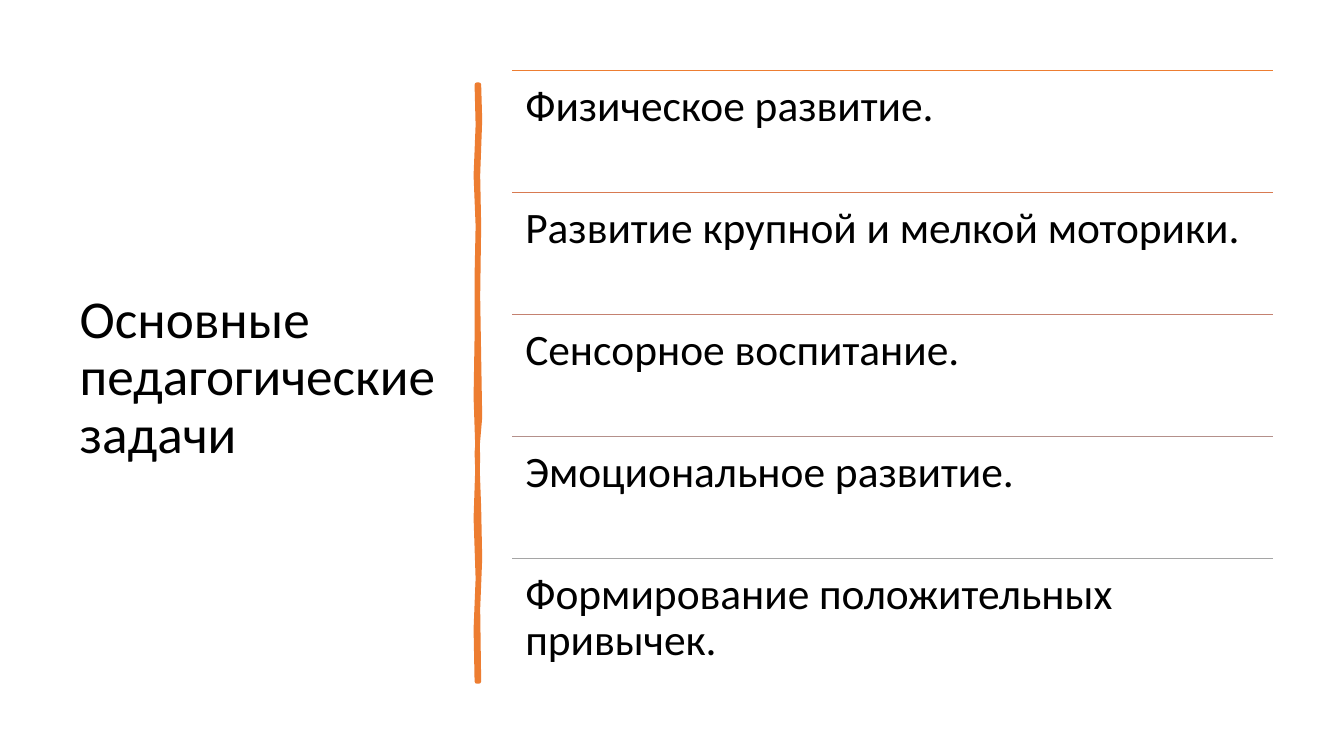
from pptx import Presentation
from pptx.dml.color import RGBColor
from pptx.enum.shapes import MSO_CONNECTOR
from pptx.enum.text import MSO_ANCHOR, MSO_AUTO_SIZE, PP_ALIGN
from pptx.oxml.ns import qn
from pptx.util import Inches, Pt

FONT = "Calibri"
ACCENT = "ED7D31"
TASKS = [
    ("Физическое развитие.", "ED7D31"),
    ("Развитие крупной и мелкой моторики.", "D87A51"),
    ("Сенсорное воспитание.", "C48170"),
    ("Эмоциональное развитие.", "B4908B"),
    ("Формирование положительных привычек.", "A5A5A5"),
]
RIGHT_EDGE = [(0, 0.02), (0.35, 0.03), (0.9, 0.01), (1.4, 0.02), (2.1, 0.01),
              (2.7, 0.02), (3.3, 0.03), (3.65, 0), (4.2, 0.02), (4.7, 0.03),
              (5.2, 0.01), (5.92, 0.02)]
LEFT_EDGE = [(5.92, 0), (5.4, -0.01), (4.9, 0.01), (4.3, -0.01), (3.7, 0.01),
             (3.1, -0.01), (2.5, 0), (1.9, 0), (1.4, 0.01), (0.9, -0.01),
             (0.4, 0.01), (0, 0)]


def color(value):
    """Return the colour for a hex string."""
    return RGBColor.from_string(value)


def write_text(box, text, size, anchor=MSO_ANCHOR.TOP, inset=0.1, inset_y=0.05):
    """Fill a shape with one left-aligned, wrapped paragraph."""
    frame = box.text_frame
    frame.word_wrap = True
    frame.auto_size = MSO_AUTO_SIZE.NONE
    frame.vertical_anchor = anchor
    frame.margin_left = frame.margin_right = Inches(inset)
    frame.margin_top = frame.margin_bottom = Inches(inset_y)
    para = frame.paragraphs[0]
    para.alignment = PP_ALIGN.LEFT
    para.line_spacing = 0.9
    para.space_before = Pt(0)
    span = para.add_run()
    span.text = text
    span.font.name = FONT
    span.font.size = Pt(size)
    span.font.color.rgb = color("000000")


def add_title(page, left, top, width, height):
    """Place the heading in the title placeholder."""
    title = page.shapes.title
    title.left, title.top = Inches(left), Inches(top)
    title.width, title.height = Inches(width), Inches(height)
    write_text(title, "Основные педагогические задачи", 38, anchor=MSO_ANCHOR.MIDDLE)


def add_brush_stroke(page, left, top):
    """Draw the uneven vertical divider."""
    points = [(Inches(left + shift), Inches(top + drop))
              for drop, shift in RIGHT_EDGE + LEFT_EDGE]
    builder = page.shapes.build_freeform(*points[0])
    builder.add_line_segments(points[1:], close=True)
    stroke = builder.convert_to_shape()
    stroke.shadow.inherit = False
    stroke.fill.solid()
    stroke.fill.fore_color.rgb = color(ACCENT)
    stroke.line.color.rgb = color(ACCENT)
    stroke.line.width = Pt(3.25)


def add_rule(page, left, top, width, line_color):
    """Draw a thin horizontal rule."""
    rule = page.shapes.add_connector(
        MSO_CONNECTOR.STRAIGHT, Inches(left), Inches(top),
        Inches(left + width), Inches(top))
    rule.line.color.rgb = color(line_color)
    rule.line.width = Pt(1)
    properties = rule._element.spPr
    properties.append(properties.makeelement(qn("a:effectLst"), {}))


def add_task_list(page, left, top, width, height):
    """Stack the tasks in equal rows, each under its own rule."""
    row_height = height / len(TASKS)
    for index, (task, line_color) in enumerate(TASKS):
        row_top = top + index * row_height
        add_rule(page, left, row_top, width, line_color)
        box = page.shapes.add_textbox(
            Inches(left), Inches(row_top), Inches(width), Inches(row_height))
        write_text(box, task, 31, inset=0.13, inset_y=0.13)


def main():
    """Build the slide and save the deck."""
    deck = Presentation()
    deck.slide_width, deck.slide_height = Inches(13.33), Inches(7.5)
    page = deck.slides.add_slide(deck.slide_layouts.get_by_name("Title Only"))
    page.background.fill.solid()
    page.background.fill.fore_color.rgb = color("FFFFFF")
    add_title(page, 0.69, 0.7, 3.74, 6.11)
    add_brush_stroke(page, 4.73, 0.84)
    add_task_list(page, 5.08, 0.7, 7.55, 6.05)
    deck.save("out.pptx")


if __name__ == "__main__":
    main()
